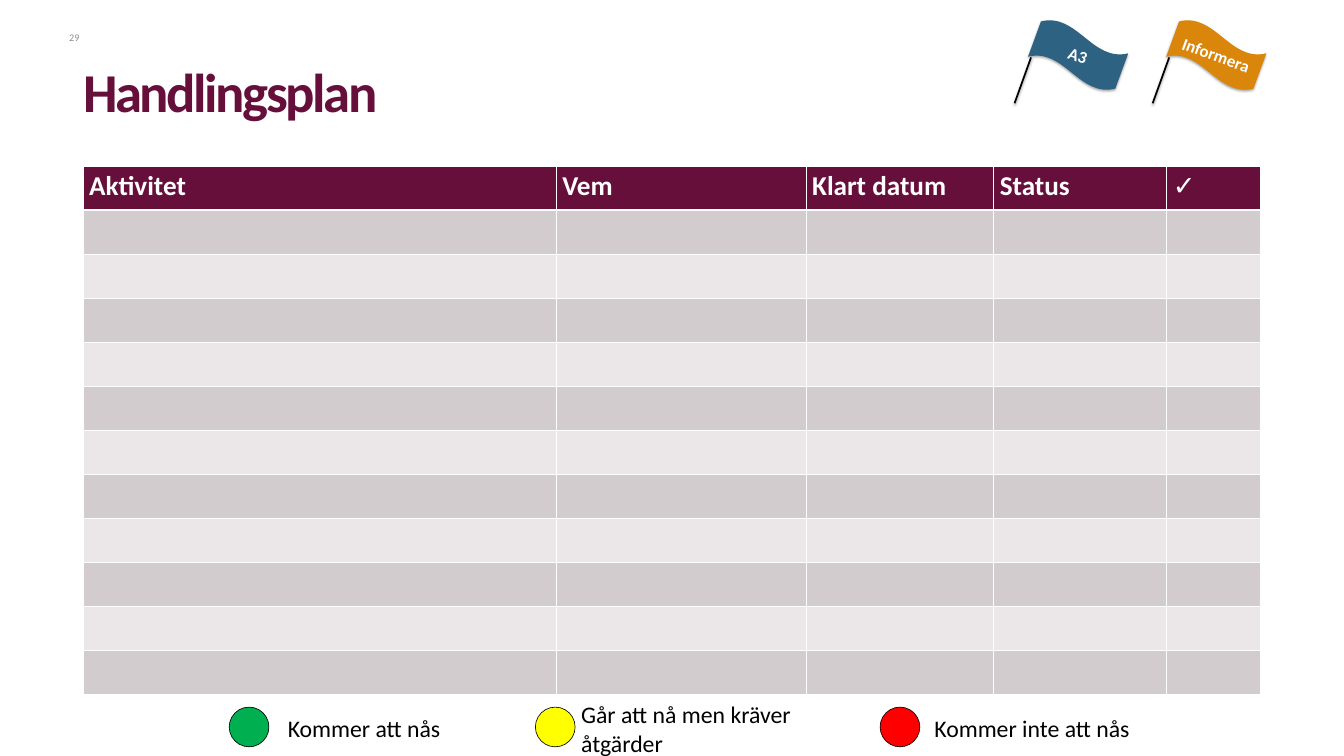
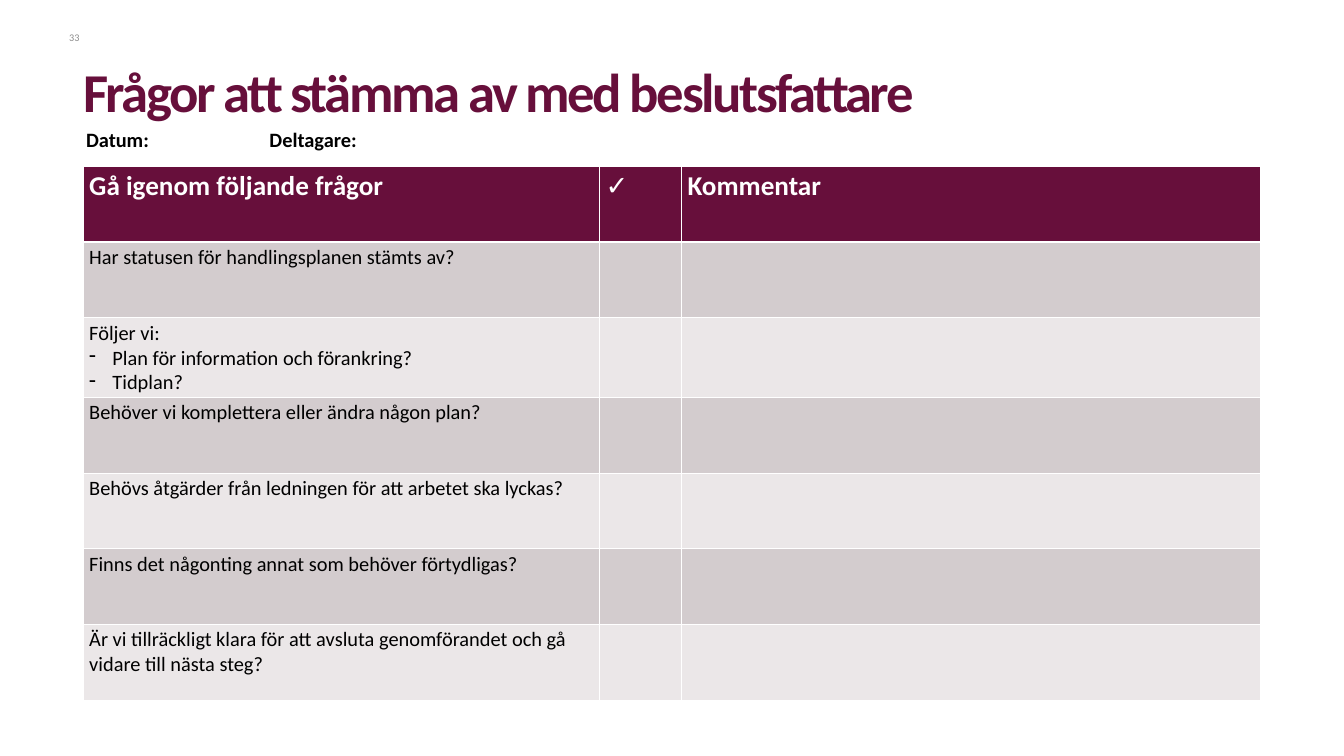
from dataclasses import dataclass
from typing import Sequence

from pptx import Presentation
from pptx.dml.color import RGBColor
from pptx.enum.shapes import MSO_CONNECTOR, MSO_SHAPE
from pptx.enum.text import MSO_ANCHOR, PP_ALIGN
from pptx.oxml.xmlchemy import OxmlElement
from pptx.util import Inches, Pt

ELLIPSE, WAVE = MSO_SHAPE.OVAL, MSO_SHAPE.WAVE
STRAIGHT = MSO_CONNECTOR.STRAIGHT
LEFT, CENTER, RIGHT = PP_ALIGN.LEFT, PP_ALIGN.CENTER, PP_ALIGN.RIGHT
TOP, MIDDLE, BOTTOM = MSO_ANCHOR.TOP, MSO_ANCHOR.MIDDLE, MSO_ANCHOR.BOTTOM

PLUM = RGBColor(0x67, 0x0F, 0x3B)
BAND_DARK = RGBColor(0xD3, 0xCC, 0xCE)
BAND_LIGHT = RGBColor(0xEB, 0xE7, 0xE8)
WHITE = RGBColor(0xFF, 0xFF, 0xFF)
BLACK = RGBColor(0x00, 0x00, 0x00)
GRAY = RGBColor(0x8C, 0x8C, 0x8C)
GREEN = RGBColor(0x00, 0xB0, 0x50)
YELLOW = RGBColor(0xFF, 0xFF, 0x00)
RED = RGBColor(0xFF, 0x00, 0x00)
BLUE = RGBColor(0x2D, 0x62, 0x83)
ORANGE = RGBColor(0xDA, 0x86, 0x0B)

FONT = "Calibri"
CHECK = "✓"
BULLET = "- "
GRID = Inches(0.1)
SLIDE_COLUMNS, SLIDE_ROWS = 219.9, 123.7
MARGIN, CONTENT_WIDTH = 13.6, 192.7
TABLE_TOP = 27.2
DOT_SIZE, DOT_TOP = 6.5, 115.7
LABEL_TOP, LABEL_HEIGHT = 114, 10.4
FLAG_TOP, FLAG_WIDTH, FLAG_HEIGHT, FLAG_TILT = 4.9, 15.2, 8.2, 20.1


@dataclass(frozen=True)
class Box:
    column: float
    row: float
    width: float
    height: float

    def lengths(self) -> tuple[int, ...]:
        return tuple(grid(cells) for cells in (self.column, self.row, self.width, self.height))


@dataclass(frozen=True)
class Flag:
    label: str
    color: RGBColor
    column: float


@dataclass(frozen=True)
class Status:
    label: str
    color: RGBColor
    dot_column: float
    label_column: float
    label_width: float


FLAGS = (Flag("A3", BLUE, 168.8), Flag("Informera", ORANGE, 191.4))
STATUSES = (
    Status("Kommer att nås", GREEN, 37.5, 46.1, 31.2),
    Status("Går att nå men kräver åtgärder", YELLOW, 87.6, 94.1, 37.6),
    Status("Kommer inte att nås", RED, 144, 151.9, 39.6),
)
PLAN_HEADINGS = ("Aktivitet", "Vem", "Klart datum", "Status", CHECK)
PLAN_WIDTHS = (77.4, 40.9, 30.7, 28.3, 15.3)
PLAN_ENTRIES = ("",) * 11
QUESTION_HEADINGS = ("Gå igenom följande frågor", CHECK, "Kommentar")
QUESTION_WIDTHS = (84.5, 13.4, 94.8)
QUESTIONS = (
    "Har statusen för handlingsplanen stämts av?",
    "Följer vi:\n- Plan för information och förankring?\n- Tidplan?",
    "Behöver vi komplettera eller ändra någon plan?",
    "Behövs åtgärder från ledningen för att arbetet ska lyckas?",
    "Finns det någonting annat som behöver förtydligas?",
    "Är vi tillräckligt klara för att avsluta genomförandet och gå vidare till nästa steg?",
)


def grid(cells: float) -> int:
    return round(cells * GRID)


def add_element(parent, tag: str, **attributes):
    element = OxmlElement(tag)
    for name, value in attributes.items():
        element.set(name, str(value))
    parent.append(element)
    return element


def write_text(frame, text: str, *, size: float, color: RGBColor = BLACK, bold: bool = False,
               align=LEFT, line_spacing: float | None = None, tracking: float = 0,
               tab: float | None = None) -> None:
    for index, line in enumerate(text.split("\n")):
        paragraph = frame.paragraphs[0] if index == 0 else frame.add_paragraph()
        properties = paragraph._p.get_or_add_pPr()
        if line.startswith(BULLET):
            properties.set("marL", str(grid(3.8)))
            properties.set("indent", str(grid(-3.8)))
            add_element(properties, "a:buChar", char=BULLET.strip())
        if tab is not None:
            add_element(add_element(properties, "a:tabLst"), "a:tab", pos=grid(tab), algn="l")
        paragraph.alignment = align
        if line_spacing is not None:
            paragraph.line_spacing = line_spacing
        run = paragraph.add_run()
        run.text = line.removeprefix(BULLET)
        run.font.name, run.font.size, run.font.bold = FONT, Pt(size), bold
        run.font.color.rgb = color
        if tracking:
            run._r.get_or_add_rPr().set("spc", str(round(tracking * 100)))


def set_insets(frame, left: float, top: float, right: float, bottom: float) -> None:
    frame.margin_left, frame.margin_top = grid(left), grid(top)
    frame.margin_right, frame.margin_bottom = grid(right), grid(bottom)


def add_text(slide, box: Box, text: str, *, anchor=TOP,
             insets: tuple[float, float, float, float] = (1, 0.5, 1, 0.5), **text_format) -> None:
    frame = slide.shapes.add_textbox(*box.lengths()).text_frame
    frame.word_wrap = True
    frame.vertical_anchor = anchor
    set_insets(frame, *insets)
    write_text(frame, text, **text_format)


def add_filled_shape(shapes, preset, box: Box, color: RGBColor):
    shape = shapes.add_shape(preset, *box.lengths())
    shape.fill.solid()
    shape.fill.fore_color.rgb = color
    return shape


def cast_shadow(shape, opacity: int, distance: float) -> None:
    effects = add_element(shape._element.spPr, "a:effectLst")
    shadow = add_element(effects, "a:outerShdw", blurRad=Pt(3.1), dist=Pt(distance),
                         dir=90 * 60000, rotWithShape=0)
    tint = add_element(shadow, "a:srgbClr", val=BLACK)
    add_element(tint, "a:alpha", val=opacity * 1000)


def add_flag(slide, flag: Flag) -> None:
    shapes = slide.shapes.add_group_shape().shapes
    cloth = add_filled_shape(shapes, WAVE, Box(flag.column, FLAG_TOP, FLAG_WIDTH, FLAG_HEIGHT),
                             flag.color)
    cloth.line.fill.background()
    cloth.rotation = FLAG_TILT
    cast_shadow(cloth, 35, 1.8)
    cloth.text_frame.vertical_anchor = MIDDLE
    set_insets(cloth.text_frame, 0, 0.5, 0, 0.5)
    write_text(cloth.text_frame, flag.label, size=20, color=WHITE, bold=True, align=CENTER)
    pole = shapes.add_connector(STRAIGHT, grid(flag.column - 0.1), grid(9.4),
                                grid(flag.column - 2.8), grid(16.9))
    pole.line.color.rgb = BLACK
    pole.line.width = Pt(2)
    cast_shadow(pole, 38, 1.6)


def add_status(slide, status: Status) -> None:
    dot = add_filled_shape(slide.shapes, ELLIPSE,
                           Box(status.dot_column, DOT_TOP, DOT_SIZE, DOT_SIZE), status.color)
    dot.line.color.rgb = BLACK
    dot.line.width = Pt(0.75)
    dot.shadow.inherit = False
    add_text(slide, Box(status.label_column, LABEL_TOP, status.label_width, LABEL_HEIGHT),
             status.label, anchor=MIDDLE, size=28)


def style_cell(cell, color: RGBColor, top: float, bottom: float) -> None:
    properties = cell._tc.get_or_add_tcPr()
    for tag, width in (("a:lnL", 1), ("a:lnR", 1), ("a:lnT", top), ("a:lnB", bottom)):
        border = add_element(properties, tag, w=Pt(width))
        add_element(add_element(border, "a:solidFill"), "a:srgbClr", val=WHITE)
    cell.fill.solid()
    cell.fill.fore_color.rgb = color


def add_banded_table(slide, headings: Sequence[str], widths: Sequence[float],
                     entries: Sequence[str], row_height: float) -> None:
    row_count = len(entries) + 1
    box = Box(MARGIN, TABLE_TOP, CONTENT_WIDTH, row_height * row_count)
    table = slide.shapes.add_table(row_count, len(headings), *box.lengths()).table
    for column, width in zip(table.columns, widths):
        column.width = grid(width)
    for index, row in enumerate(table.rows):
        row.height = grid(row_height)
        color = PLUM if index == 0 else BAND_DARK if index % 2 else BAND_LIGHT
        for cell in row.cells:
            style_cell(cell, color, top=3 if index == 1 else 1, bottom=3 if index == 0 else 1)
    for column_index, heading in enumerate(headings):
        write_text(table.cell(0, column_index).text_frame, heading, size=32, color=WHITE,
                   bold=heading != CHECK)
    for row_index, entry in enumerate(entries, start=1):
        if entry:
            write_text(table.cell(row_index, 0).text_frame, entry, size=24)


def add_titled_slide(presentation, title: str, number: int):
    slide = presentation.slides.add_slide(presentation.slide_layouts[6])
    add_text(slide, Box(9.1, 5.2, 3.9, 2), str(number), insets=(0, 0, 0, 0), size=12,
             color=GRAY, align=RIGHT)
    add_text(slide, Box(MARGIN, 9.6, CONTENT_WIDTH, 11.4), title, anchor=BOTTOM,
             insets=(0, 0, 0, 0.8), size=64.5, color=PLUM, bold=True, line_spacing=0.85,
             tracking=-2.8)
    return slide


def build_action_plan(presentation) -> None:
    slide = add_titled_slide(presentation, "Handlingsplan", 29)
    add_banded_table(slide, PLAN_HEADINGS, PLAN_WIDTHS, PLAN_ENTRIES, 7.2)
    for status in STATUSES:
        add_status(slide, status)
    for flag in FLAGS:
        add_flag(slide, flag)


def build_questions(presentation) -> None:
    slide = add_titled_slide(presentation, "Frågor att stämma av med beslutsfattare", 33)
    add_banded_table(slide, QUESTION_HEADINGS, QUESTION_WIDTHS, QUESTIONS, 12.4)
    add_text(slide, Box(13.1, 20.3, 153.9, 5), "Datum:\tDeltagare:", size=24, bold=True, tab=30)


def main() -> None:
    presentation = Presentation()
    presentation.slide_width = grid(SLIDE_COLUMNS)
    presentation.slide_height = grid(SLIDE_ROWS)
    build_action_plan(presentation)
    build_questions(presentation)
    presentation.save("out.pptx")


if __name__ == "__main__":
    main()
